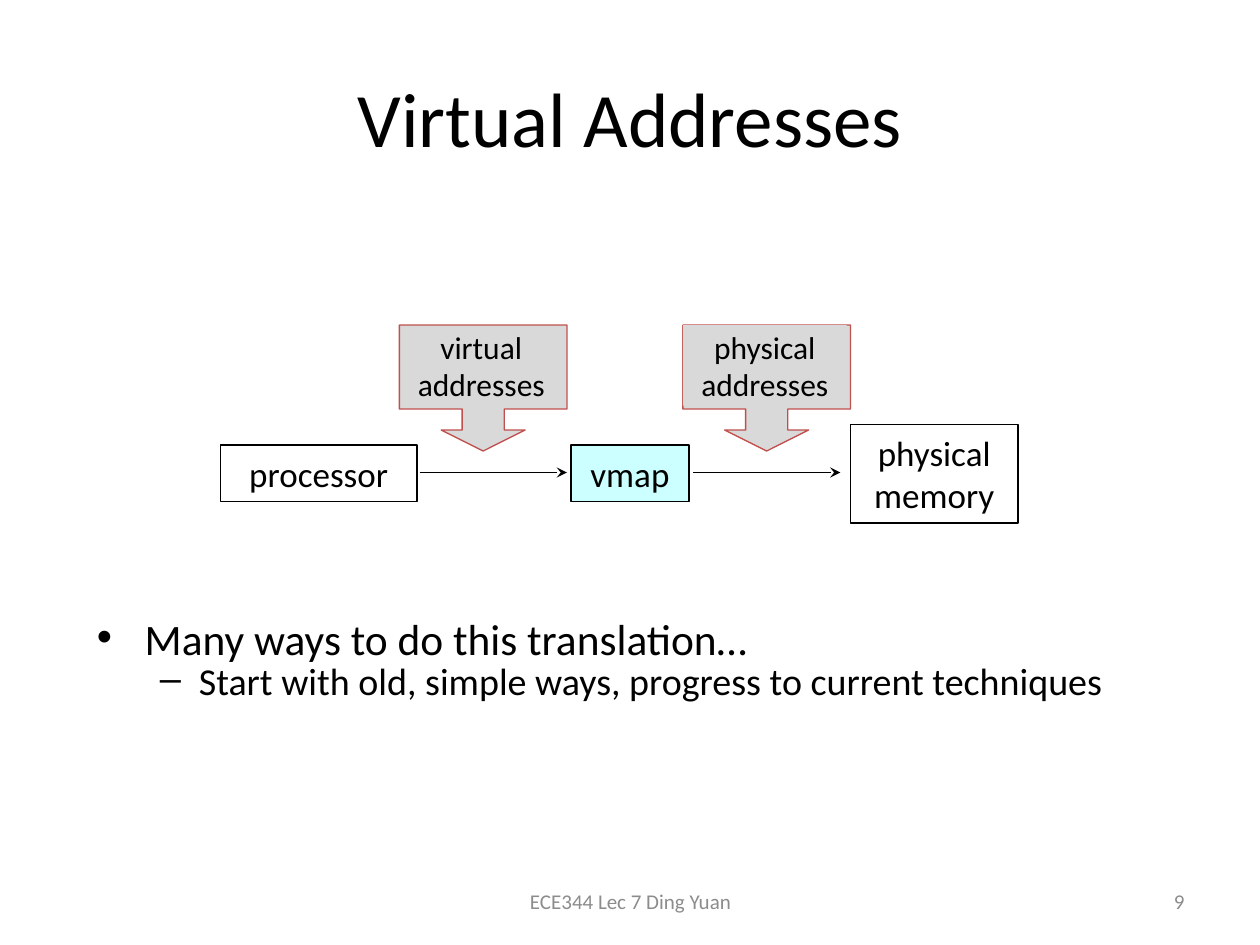
import pptx
import pptx.dml.color
import pptx.enum.shapes
import pptx.enum.text
import pptx.oxml.ns
import pptx.util
from lxml import etree

Inches = pptx.util.Inches
Pt = pptx.util.Pt
RGBColor = pptx.dml.color.RGBColor
ShapeType = pptx.enum.shapes.MSO_SHAPE
Anchor = pptx.enum.text.MSO_ANCHOR
Align = pptx.enum.text.PP_ALIGN
AutoSize = pptx.enum.text.MSO_AUTO_SIZE
qn = pptx.oxml.ns.qn

BLACK = RGBColor(0x00, 0x00, 0x00)
FOOTER_GRAY = RGBColor(0x8C, 0x8C, 0x8C)
CALLOUT_GRAY = RGBColor(0xD9, 0xD9, 0xD9)
CALLOUT_RED = RGBColor(0xC0, 0x50, 0x4D)
MAP_CYAN = RGBColor(0xCC, 0xFF, 0xFF)


class SlideBuilder:
    font_name = "Calibri"

    def __init__(self, slide):
        self.slide = slide

    def apply(self, target, formats):
        for name, value in formats.items():
            setattr(target, name, value)

    def fill_paragraph(self, paragraph, text, size, color=BLACK, align=Align.CENTER):
        paragraph.text = text
        paragraph.alignment = align
        for run in paragraph.runs:
            self.apply(run.font, {"name": self.font_name, "size": Pt(size)})
            run.font.color.rgb = color

    def text(self, box, text, size, color=BLACK, align=Align.CENTER):
        shape = self.slide.shapes.add_textbox(*map(Inches, box))
        self.apply(shape.text_frame, {"word_wrap": True, "vertical_anchor": Anchor.MIDDLE})
        self.fill_paragraph(shape.text_frame.paragraphs[0], text, size, color, align)

    def shape(self, kind, box, fill=None, line=None, width=1):
        shape = self.slide.shapes.add_shape(kind, *map(Inches, box))
        shape.shadow.inherit = False
        if fill is None:
            shape.fill.background()
        else:
            shape.fill.solid()
            shape.fill.fore_color.rgb = fill
        if line is None:
            shape.line.fill.background()
        else:
            shape.line.color.rgb = line
            shape.line.width = Pt(width)
        return shape

    def box(self, box, text, size=20, fill=None, line=BLACK):
        shape = self.shape(ShapeType.RECTANGLE, box, fill, line)
        formats = {"word_wrap": False, "vertical_anchor": Anchor.MIDDLE,
                   "auto_size": AutoSize.SHAPE_TO_FIT_TEXT}
        self.apply(shape.text_frame, formats)
        self.fill_paragraph(shape.text_frame.paragraphs[0], text, size)

    def callout(self, left, top):
        shape = self.shape(ShapeType.DOWN_ARROW_CALLOUT, (left, top, 1.33, 1),
                           CALLOUT_GRAY, CALLOUT_RED, 0.75)
        for index, value in enumerate((1 / 3, 1 / 3, 1 / 6, 2 / 3)):
            shape.adjustments[index] = value

    def arrow(self, start, end, height):
        connector = self.slide.shapes.add_connector(
            pptx.enum.shapes.MSO_CONNECTOR.STRAIGHT,
            Inches(start), Inches(height), Inches(end), Inches(height))
        connector.line.color.rgb = BLACK
        connector.line.width = Pt(1)
        properties = connector.element.spPr
        etree.SubElement(properties.find(qn("a:ln")), qn("a:tailEnd"), type="stealth")
        etree.SubElement(properties, qn("a:effectLst"))

    def bullets(self, box, items):
        shape = self.slide.shapes.add_textbox(*map(Inches, box))
        frame = shape.text_frame
        frame.word_wrap = True
        for index, (text, size, mark, margin, indent) in enumerate(items):
            paragraph = frame.add_paragraph() if index else frame.paragraphs[0]
            self.fill_paragraph(paragraph, text, size, align=Align.LEFT)
            self.apply(paragraph, {"level": index, "line_spacing": 0.7,
                                   "space_before": Pt(round(size * 0.2))})
            properties = paragraph._p.get_or_add_pPr()
            properties.set("marL", str(Inches(margin)))
            properties.set("indent", str(Inches(indent)))
            etree.SubElement(properties, qn("a:buFont"), typeface="Arial")
            etree.SubElement(properties, qn("a:buChar"), char=mark)


def main():
    presentation = pptx.Presentation()
    presentation.slide_width = Inches(10)
    presentation.slide_height = Inches(7.5)
    builder = SlideBuilder(presentation.slides.add_slide(presentation.slide_layouts[6]))

    builder.text((0.5, 0.3, 9, 1.25), "Virtual Addresses", 44)
    builder.bullets((0.67, 4.92, 8.67, 1), [
        ("Many ways to do this translation…", 24.8, "•", 0.38, -0.38),
        ("Start with old, simple ways, progress to current techniques", 21.7, "–", 0.81, -0.31),
    ])
    builder.text((3.42, 6.95, 3.17, 0.4), "ECE344 Lec 7 Ding Yuan", 12, FOOTER_GRAY)
    builder.text((7.17, 6.95, 2.33, 0.4), "9", 12, FOOTER_GRAY, Align.RIGHT)

    builder.box((4.53, 3.53, 0.94, 0.45), "vmap", fill=MAP_CYAN)
    builder.box((1.75, 3.53, 1.56, 0.45), "processor")
    builder.box((6.75, 3.37, 1.33, 0.78), "physical\vmemory")
    for start in (3.33, 5.5):
        builder.arrow(start, start + 1.17, 3.75)

    label_top = 2.58
    virtual_left, physical_left = 3.17, 5.42
    builder.callout(virtual_left, label_top)
    builder.text((virtual_left, label_top, 1.3, 0.64), "virtual\vaddresses", 18)
    builder.callout(physical_left, label_top)
    builder.box((physical_left, label_top, 1.3, 0.64), "physical\vaddresses", 18,
                CALLOUT_GRAY, None)

    presentation.save("out.pptx")


if __name__ == "__main__":
    main()
